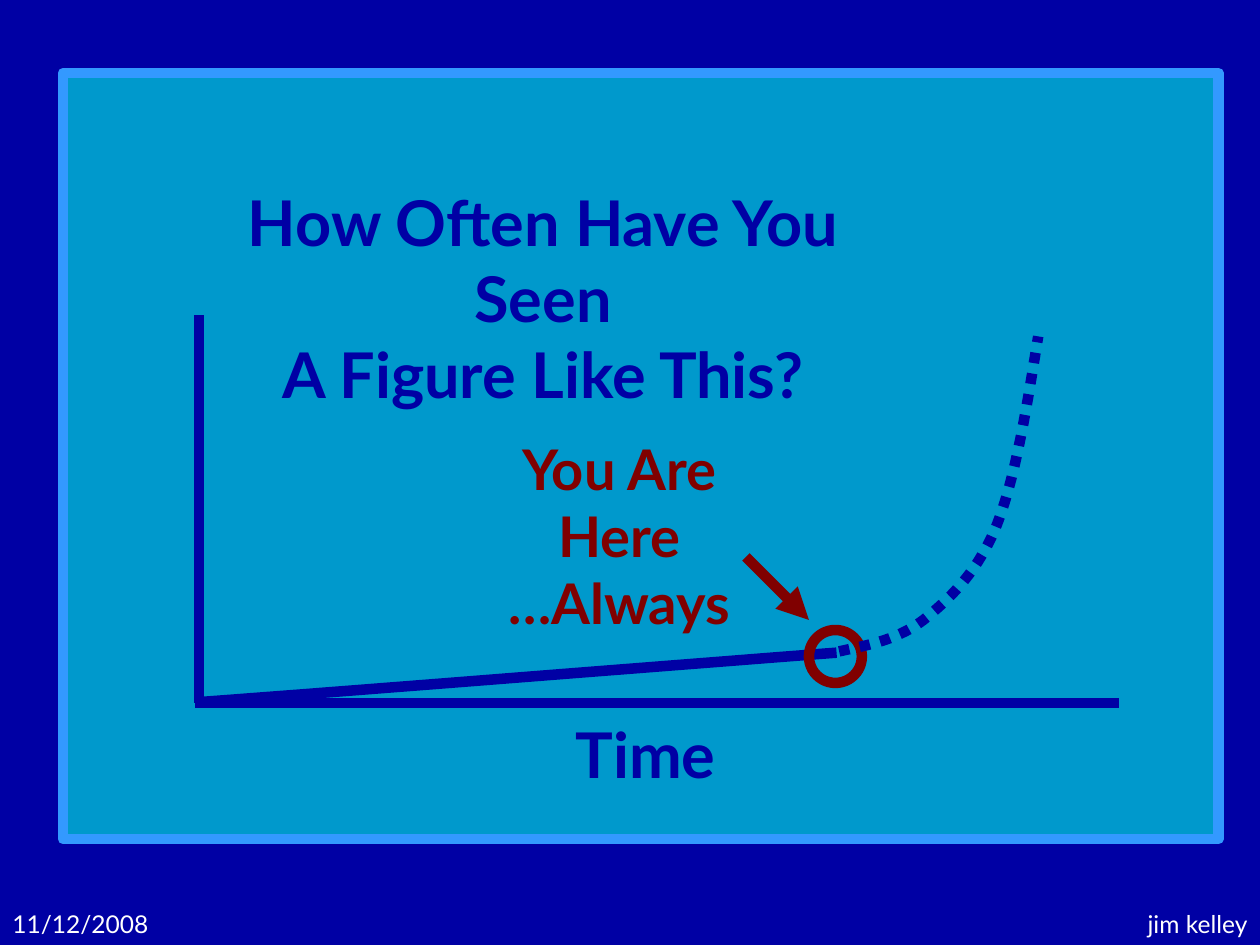
from dataclasses import dataclass
from typing import Optional

from lxml.etree import SubElement
from pptx import Presentation
from pptx.dml.color import RGBColor as Rgb
from pptx.enum.dml import MSO_LINE as Dash
from pptx.enum.shapes import MSO_CONNECTOR as Conn, MSO_SHAPE as Kind
from pptx.enum.text import MSO_ANCHOR as Anchor, MSO_AUTO_SIZE as Fit, PP_ALIGN as Align
from pptx.oxml.ns import qn
from pptx.util import Inches, Pt

Point = tuple[float, float]
Box = tuple[float, float, float, float]


@dataclass(frozen=True)
class Theme:
    navy: str = "0000A4"
    teal: str = "0099CC"
    sky: str = "3399FF"
    red: str = "800000"
    white: str = "FFFFFF"
    font: str = "Lato"
    head: int = 36
    call: int = 32
    foot: int = 14
    line: int = 6


@dataclass(frozen=True)
class Stroke:
    start: Point
    end: Point
    color: str
    arrow: bool = False


@dataclass(frozen=True)
class Curve:
    points: tuple[Point, ...]
    dash: Optional[Dash] = None


T = Theme()
AXES = (
    Stroke((1.58, 2.5), (1.58, 5.58), T.navy),
    Stroke((1.55, 5.58), (8.88, 5.58), T.navy),
)
POINTER = Stroke((5.92, 4.42), (6.42, 4.92), T.red, arrow=True)
PAST = Curve(((1.61, 5.57), (2.45, 5.51), (5.59, 5.26), (6.64, 5.18)))
FUTURE = Curve(
    ((6.66, 5.17), (6.89, 5.12), (7.12, 5.08), (7.33, 4.92), (7.54, 4.75),
     (7.76, 4.54), (7.91, 4.17), (8.06, 3.79), (8.15, 3.23), (8.24, 2.67)),
    Dash.ROUND_DOT,
)


def paint(line, color: str) -> None:
    line.color.rgb = Rgb.from_string(color)
    line.width = Pt(T.line)


def write(slide, text: str, box: Box, *, size: int, color: str, bold: bool = False,
          align: Align = Align.LEFT, anchor: Anchor = Anchor.TOP, shape=None) -> None:
    left, top, width, height = map(Inches, box)
    if shape is None:
        shape = slide.shapes.add_textbox(left, top, width, height)
    shape.left, shape.top, shape.width, shape.height = left, top, width, height
    frame = shape.text_frame
    frame.text = text
    frame.word_wrap = True
    frame.auto_size = Fit.NONE
    frame.vertical_anchor = anchor
    for para in frame.paragraphs:
        para.alignment = align
        for run in para.runs:
            font = run.font
            font.name, font.size, font.bold = T.font, Pt(size), bold
            font.color.rgb = Rgb.from_string(color)


def draw_shape(slide, kind: Kind, box: Box, edge: str, fill: Optional[str] = None) -> None:
    shape = slide.shapes.add_shape(kind, *map(Inches, box))
    shape.shadow.inherit = False
    if fill:
        shape.fill.solid()
        shape.fill.fore_color.rgb = Rgb.from_string(fill)
    else:
        shape.fill.background()
    paint(shape.line, edge)


def draw_line(slide, stroke: Stroke) -> None:
    ends = map(Inches, (*stroke.start, *stroke.end))
    link = slide.shapes.add_connector(Conn.STRAIGHT, *ends)
    paint(link.line, stroke.color)
    props = link._element.spPr
    if stroke.arrow:
        SubElement(props.find(qn("a:ln")), qn("a:tailEnd"), type="triangle")
    SubElement(props, qn("a:effectLst"))


def trace(points: tuple[Point, ...], steps: int = 24) -> list[Point]:
    path = [points[0]]
    for base in range(0, len(points) - 1, 3):
        part = points[base:base + 4]
        for step in range(1, steps + 1):
            t = step / steps
            u = 1 - t
            mix = (u ** 3, 3 * u * u * t, 3 * u * t * t, t ** 3)
            path.append((sum(m * p[0] for m, p in zip(mix, part)),
                         sum(m * p[1] for m, p in zip(mix, part))))
    return path


def draw_curve(slide, curve: Curve) -> None:
    path = [(Inches(x), Inches(y)) for x, y in trace(curve.points)]
    pen = slide.shapes.build_freeform(*path[0])
    pen.add_line_segments(path[1:], close=False)
    shape = pen.convert_to_shape()
    shape.shadow.inherit = False
    shape.fill.background()
    paint(shape.line, T.navy)
    if curve.dash:
        shape.line.dash_style = curve.dash


def main() -> None:
    deck = Presentation()
    deck.slide_width, deck.slide_height = Inches(10), Inches(7.5)
    slide = deck.slides.add_slide(deck.slide_layouts[5])
    slide.background.fill.solid()
    slide.background.fill.fore_color.rgb = Rgb.from_string(T.navy)
    title = slide.shapes.title

    foot = dict(size=T.foot, color=T.white, anchor=Anchor.BOTTOM)
    write(slide, "11/12/2008", (0, 6.98, 2.5, 0.52), **foot)
    write(slide, "jim kelley", (6.83, 6.98, 3.17, 0.52), align=Align.RIGHT, **foot)

    draw_shape(slide, Kind.RECTANGLE, (0.5, 0.58, 9.17, 6.08), T.sky, T.teal)
    draw_curve(slide, PAST)
    draw_shape(slide, Kind.OVAL, (6.42, 5, 0.42, 0.42), T.red)
    write(slide, "You Are Here\n…Always", (3.53, 3.4, 2.77, 1.17),
          size=T.call, color=T.red, bold=True, align=Align.CENTER)
    draw_line(slide, POINTER)

    slide.shapes._spTree.append(title._element)
    head = dict(size=T.head, color=T.navy, bold=True)
    write(slide, "How Often Have You Seen\nA Figure Like This?", (1.37, 1.41, 5.88, 1.3),
          align=Align.CENTER, shape=title, **head)
    for axis in AXES:
        draw_line(slide, axis)
    write(slide, "Time", (4.47, 5.63, 1.38, 0.7), **head)
    draw_curve(slide, FUTURE)
    deck.save("out.pptx")


if __name__ == "__main__":
    main()
